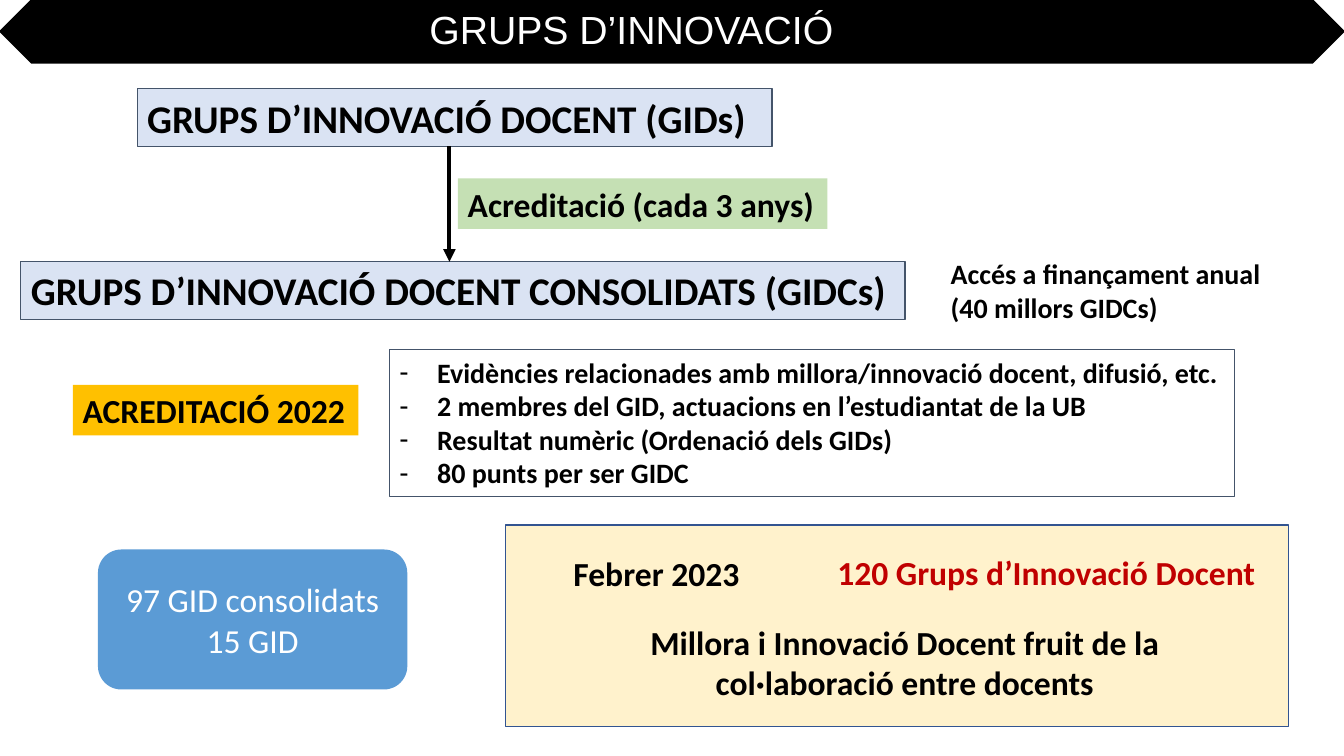
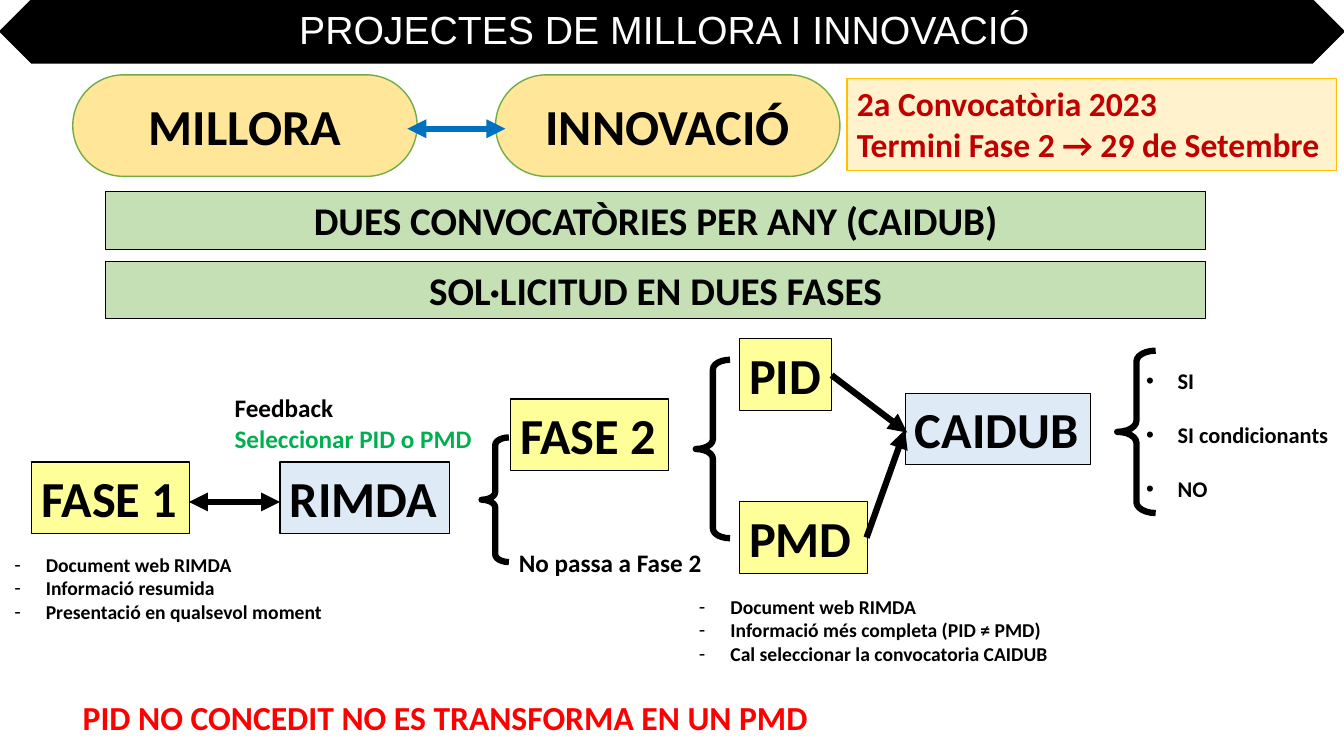
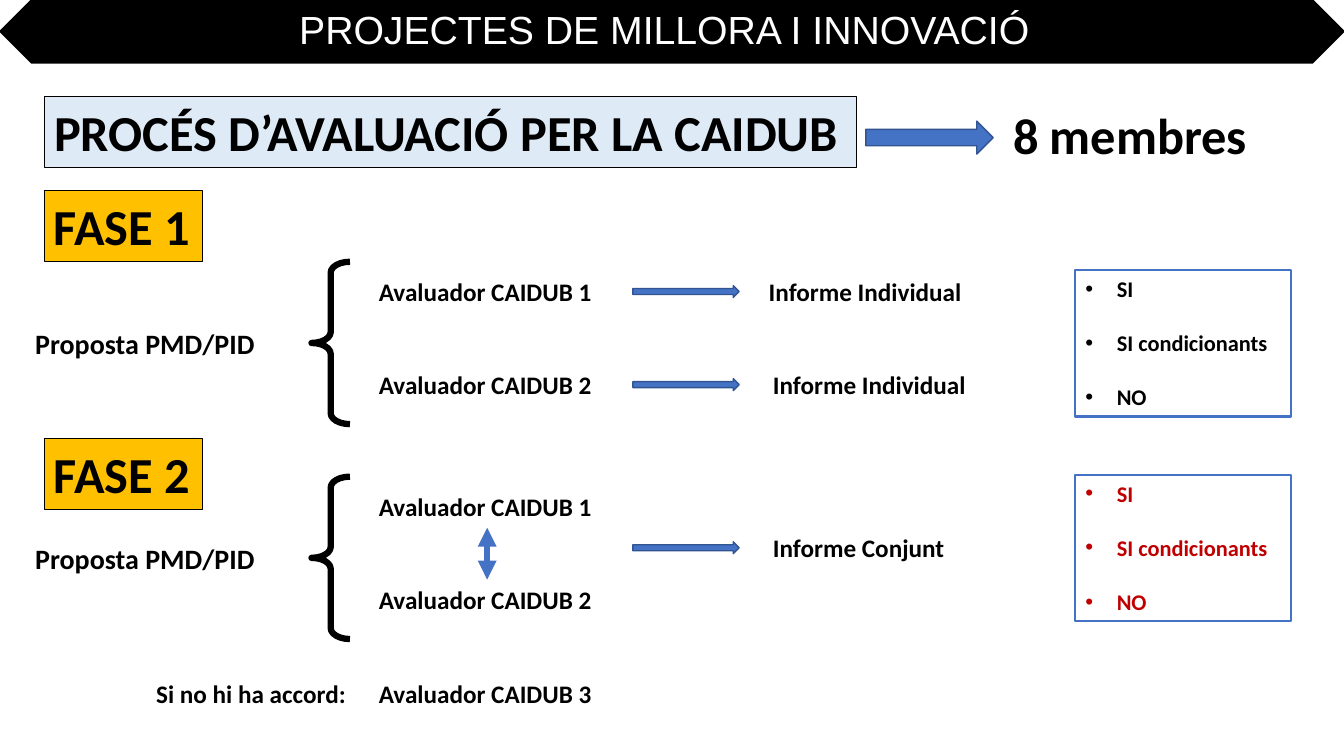
from lxml import etree
from pptx import Presentation
from pptx.dml.color import RGBColor
from pptx.enum.shapes import MSO_CONNECTOR, MSO_SHAPE
from pptx.enum.text import MSO_ANCHOR, MSO_AUTO_SIZE, PP_ALIGN
from pptx.oxml.ns import qn
from pptx.util import Pt

RECT, ROUNDED = MSO_SHAPE.RECTANGLE, MSO_SHAPE.ROUNDED_RECTANGLE
BAND, BRACE, ARROW = (MSO_SHAPE.SNIP_2_DIAG_RECTANGLE, MSO_SHAPE.LEFT_BRACE,
                      MSO_SHAPE.RIGHT_ARROW)
LEFT, CENTER = PP_ALIGN.LEFT, PP_ALIGN.CENTER
TOP, MIDDLE = MSO_ANCHOR.TOP, MSO_ANCHOR.MIDDLE
STRAIGHT, NO_FIT = MSO_CONNECTOR.STRAIGHT, MSO_AUTO_SIZE.NONE

BLACK, WHITE = "000000", "FFFFFF"
LAVENDER, PALE_BLUE, SKY = "DAE3F3", "DEEBF7", "5B9BD5"
BLUE, NAVY, SLATE, ARROW_BLUE = "4472C4", "325491", "44546A", "0070C0"
GREEN, LEAF, PALE_GREEN = "00B050", "70AD47", "C5E0B4"
GOLD, SAND, CREAM, YELLOW = "FFC000", "FFE699", "FFF2CC", "FFFF99"
CRIMSON, RED = "C00000", "FF0000"

SLIDE_W, SLIDE_H = 960, 540
TAG_H = 51
TITLE_AND_LIST, TWO_LISTS, FOUR_LISTS = 1, 3, 4
OUTCOMES = ["SI", "SI condicionants", "NO"]


# Shared helpers: every box is (left, top, width, height) in points

def rgb(color):
    return RGBColor.from_string(color)


def inside(box, left, top, width, height):
    return box[0] + left, box[1] + top, width, height


def move(shape, box):
    shape.left, shape.top, shape.width, shape.height = map(Pt, box)


def paint(shape, fill=None, line=None, weight=0.75):
    if fill:
        shape.fill.solid()
        shape.fill.fore_color.rgb = rgb(fill)
    else:
        shape.fill.background()
    if line:
        shape.line.color.rgb = rgb(line)
        shape.line.width = Pt(weight)
    else:
        shape.line.fill.background()


def write(shape, lines, size, color=BLACK, bold=True, font="Calibri",
          align=LEFT, anchor=TOP, wrap=True, bullet=None, indent=0, gap=0):
    frame = shape.text_frame
    frame.text = "\n".join(lines)
    frame.word_wrap = wrap
    frame.auto_size = NO_FIT
    frame.vertical_anchor = anchor
    for number, paragraph in enumerate(frame.paragraphs):
        if bullet:
            props = paragraph._p.get_or_add_pPr()
            props.set("marL", str(Pt(indent)))
            props.set("indent", str(-Pt(indent)))
            etree.SubElement(props, qn("a:buChar")).set("char", bullet)
        paragraph.alignment = align
        paragraph.space_before = Pt(gap if number else 0)
        paragraph.font.name = font
        paragraph.font.size = Pt(size)
        paragraph.font.bold = bold
        paragraph.font.color.rgb = rgb(color)


def draw(slide, kind, box, fill=None, line=None, weight=0.75, adjust=()):
    shape = slide.shapes.add_shape(kind, *map(Pt, box))
    shape.shadow.inherit = False
    for number, value in enumerate(adjust):
        shape.adjustments[number] = value
    paint(shape, fill, line, weight)
    return shape


def label(slide, box, lines, size, wrap=False, **style):
    textbox = slide.shapes.add_textbox(*map(Pt, box))
    write(textbox, lines, size, wrap=wrap, **style)
    return textbox


def tag(slide, box, lines, size, fill, line=None, wrap=False, **style):
    write(draw(slide, RECT, box, fill, line), lines, size, wrap=wrap, **style)


def brace(slide, box):
    draw(slide, BRACE, box, None, BLACK, 4.5, (0.284, 0.5))


def block_arrow(slide, box):
    draw(slide, ARROW, box, BLUE, NAVY, 1)


def arrow(slide, start, end, color=BLACK, weight=4.5, both=False):
    connector = slide.shapes.add_connector(STRAIGHT, *map(Pt, start + end))
    connector.line.color.rgb = rgb(color)
    connector.line.width = Pt(weight)
    line = connector.line._get_or_add_ln()
    for tip in ["headEnd", "tailEnd"] if both else ["tailEnd"]:
        etree.SubElement(line, qn("a:" + tip)).set("type", "triangle")
    etree.SubElement(connector._element.spPr, qn("a:effectLst"))


def fill_list(holder, box, items, size, bullet="-", indent=22.5, line=None,
              weight=0.75, **style):
    move(holder, box)
    paint(holder, None, line, weight)
    write(holder, items, size, bullet=bullet, indent=indent, **style)


def outcome_list(holder, box, color=BLACK, line=None):
    fill_list(holder, box, OUTCOMES, 16, "•", line=line, weight=1.5,
              color=color, gap=19.5)


def new_slide(deck, layout, title, title_left):
    """Return a slide with band and title, and its list placeholders."""
    slide = deck.slides.add_slide(deck.slide_layouts[layout])
    band = draw(slide, BAND, (0, 0, SLIDE_W, 45), BLACK, BLACK, 1, (0.5, 0.5))
    slide.shapes._spTree.insert(2, band._element)
    move(slide.shapes.title, (title_left, 0, SLIDE_W - title_left, 45))
    write(slide.shapes.title, [title], 28, WHITE, False, "Arial")
    return slide, list(slide.placeholders)[1:]


# Slide 1: innovation groups

def group_levels(slide, box):
    for area, name in [
            ((83, 0, 453.5, 41), "GRUPS D’INNOVACIÓ DOCENT (GIDs)"),
            ((0, 123.5, 631.5, 41),
             "GRUPS D’INNOVACIÓ DOCENT CONSOLIDATS (GIDCs)")]:
        tag(slide, inside(box, *area), [name], 28, LAVENDER, SLATE, wrap=True)
    axis = box[0] + 306
    arrow(slide, (axis, box[1] + 41), (axis, box[1] + 123.5), weight=3)
    tag(slide, inside(box, 312, 64, 264, 36),
        ["Acreditació (cada 3 anys)"], 24, PALE_GREEN)
    label(slide, inside(box, 657, 116.5, 238, 55.5),
          ["Accés a finançament anual", "(40 millors GIDCs)"], 20)


def accreditation(slide, box, criteria):
    tag(slide, inside(box, 0, 25, 204, 36), ["ACREDITACIÓ 2022"], 24, GOLD)
    fill_list(criteria, inside(box, 226, 0, 604, 104.5), [
        "Evidències relacionades amb millora/innovació docent, difusió, etc.",
        "2 membres del GID, actuacions en l’estudiantat de la UB",
        "Resultat numèric (Ordenació dels GIDs)",
        "80 punts per ser GIDC"], 20, indent=27, line=SLATE)


def group_count(slide, box):
    count = draw(slide, ROUNDED, box, SKY)
    write(count, ["97 GID consolidats", "15 GID"], 24, WHITE, False,
          align=CENTER, anchor=MIDDLE)


def february_panel(slide, box):
    draw(slide, RECT, box, CREAM, NAVY, 1)
    label(slide, inside(box, 41.5, 16.5, 134, 36), ["Febrer 2023"], 24)
    label(slide, inside(box, 230, 16, 315.5, 36),
          ["120 Grups d’Innovació Docent"], 24, color=CRIMSON)
    label(slide, inside(box, 90.5, 65.5, 389.5, 65.5),
          ["Millora i Innovació Docent fruit de la col·laboració "
           "entre docents"], 24, wrap=True, align=CENTER)


def groups_slide(deck):
    slide, (criteria,) = new_slide(deck, TITLE_AND_LIST,
                                   "GRUPS D’INNOVACIÓ", 299.5)
    group_levels(slide, (15, 63.5, 895, 172))
    accreditation(slide, (52, 250, 830, 104.5), criteria)
    group_count(slide, (70, 392.5, 221, 100))
    february_panel(slide, (361, 375, 559.5, 144))


# Slide 2: calls and phases

def project_kinds(slide, box):
    width, step = 246, 302
    for number, kind in enumerate(["MILLORA", "INNOVACIÓ"]):
        pill = draw(slide, ROUNDED, inside(box, number * step, 0, width, box[3]),
                    SAND, LEAF, 1, (0.5,))
        write(pill, [kind], 36, align=CENTER, anchor=MIDDLE)
    level = box[1] + 38.5
    arrow(slide, (box[0] + width - 7, level), (box[0] + step + 7, level),
          ARROW_BLUE, both=True)


def call_rules(slide, box):
    height = 41
    for number, rule in enumerate(["DUES CONVOCATÒRIES PER ANY (CAIDUB)",
                                   "SOL·LICITUD EN DUES FASES"]):
        top = number * (box[3] - height)
        tag(slide, inside(box, 0, top, box[2], height), [rule], 28,
            PALE_GREEN, BLACK, wrap=True, align=CENTER)


def first_phase(slide, box, requirements):
    tag(slide, inside(box, 19.5, 53, 113, TAG_H), ["FASE 1"], 36,
        YELLOW, BLACK)
    tag(slide, inside(box, 197, 53, 121, TAG_H), ["RIMDA"], 36,
        PALE_BLUE, BLACK)
    level = box[1] + 81.5
    arrow(slide, (box[0] + 132, level), (box[0] + 197, level), both=True)
    feedback = label(slide, inside(box, 157.5, 0, 186, TAG_H),
                     ["Feedback", "Seleccionar PID o PMD"], 18)
    feedback.text_frame.paragraphs[1].font.color.rgb = rgb(GREEN)
    fill_list(requirements, inside(box, 0, 114, 236, 58.5),
              ["Document web RIMDA", "Informació resumida",
               "Presentació en qualsevol moment"], 14)


def second_phase(slide, box, requirements, outcomes):
    for area in [(0, 70.5, 19.5, 89), (153, 15, 24.5, 127.5),
                 (454, 8.5, 27.5, 116)]:
        brace(slide, inside(box, *area))
    for left, top, width, name, fill in [
            (20.5, 43, 113, "FASE 2", YELLOW), (184, 0, 66, "PID", YELLOW),
            (184, 116.5, 91.5, "PMD", YELLOW),
            (302.5, 39, 132.5, "CAIDUB", PALE_BLUE)]:
        tag(slide, inside(box, left, top, width, TAG_H), [name], 36,
            fill, BLACK)
    label(slide, inside(box, 19.5, 145.5, 146, 29), ["No passa a Fase 2"], 18)
    left, top = box[:2]
    arrow(slide, (left + 250, top + 26), (left + 304, top + 67))
    arrow(slide, (left + 275, top + 142), (left + 302.5, top + 65))
    fill_list(requirements, inside(box, 148, 179, 266, 58.5),
              ["Document web RIMDA", "Informació més completa (PID ≠ PMD)",
               "Cal seleccionar la convocatoria CAIDUB"], 14)
    outcome_list(outcomes, inside(box, 467.5, 16.5, 148.5, 104.5))


def calls_slide(deck):
    slide, (first, second, outcomes, spare) = new_slide(
        deck, FOUR_LISTS, "PROJECTES DE MILLORA I INNOVACIÓ", 206.5)
    spare._element.getparent().remove(spare._element)
    project_kinds(slide, (52, 53.5, 548, 72.5))
    tag(slide, (605, 56, 350, 65.5),
        ["2a Convocatòria 2023", "Termini Fase 2 → 29 de Setembre"], 24,
        CREAM, GOLD, color=CRIMSON)
    call_rules(slide, (75.5, 137, 785.5, 90.5))
    first_phase(slide, (3, 277, 344, 172.5), first)
    second_phase(slide, (344, 242, 616, 237.5), second, outcomes)
    label(slide, (52, 494, 554, 36),
          ["PID NO CONCEDIT NO ES TRANSFORMA EN UN PMD"], 24, color=RED)


# Slide 3: evaluation process

def process_header(slide, box):
    tag(slide, inside(box, 0, 0, 580.5, TAG_H),
        ["PROCÉS D’AVALUACIÓ PER LA CAIDUB"], 36, PALE_BLUE, BLACK)
    block_arrow(slide, inside(box, 587, 17.5, 91, 23.5))
    label(slide, inside(box, 685, 2, 183.5, TAG_H), ["8 membres"], 36)


def evaluation(slide, box, reports):
    """Proposal, two evaluators and reports given as (left, top, name)."""
    label(slide, inside(box, 0, 42.5, 173, 31.5), ["Proposta PMD/PID"], 20)
    brace(slide, inside(box, 204.5, 0, 27.5, box[3]))
    for number, top in enumerate([7, 73.5], 1):
        label(slide, inside(box, 245.5, top, 168, 29),
              [f"Avaluador CAIDUB {number}"], 18)
    for left, top, name in reports:
        block_arrow(slide, inside(box, 434, top + 10, 76, 8.5))
        label(slide, inside(box, left, top, 153, 29), [name], 18, wrap=True)


def evaluation_slide(deck):
    slide, (first, second) = new_slide(
        deck, TWO_LISTS, "PROJECTES DE MILLORA I INNOVACIÓ", 206.5)
    process_header(slide, (31.5, 69, 868.5, 53))
    for name, top in [("FASE 1", 136), ("FASE 2", 313)]:
        tag(slide, (31.5, top, 113, TAG_H), [name], 36, GOLD, BLACK)
    evaluation(slide, (18, 187, 680, 116), [
        (524, 7, "Informe Individual"), (527, 73.5, "Informe Individual")])
    evaluation(slide, (18, 340.5, 680, 116), [(527, 36.5, "Informe Conjunt")])
    arrow(slide, (348, 377), (348, 414), BLUE, both=True)
    outcome_list(first, (768, 193, 154, 104.5), line=BLUE)
    outcome_list(second, (768, 339, 154, 104.5), CRIMSON, BLUE)
    # Tie-break
    label(slide, (104.5, 481, 151, 29), ["Si no hi ha accord:"], 18)
    label(slide, (263.5, 481, 168, 29), ["Avaluador CAIDUB 3"], 18)


def main():
    deck = Presentation()
    deck.slide_width, deck.slide_height = Pt(SLIDE_W), Pt(SLIDE_H)
    groups_slide(deck)
    calls_slide(deck)
    evaluation_slide(deck)
    deck.save("out.pptx")


if __name__ == "__main__":
    main()
